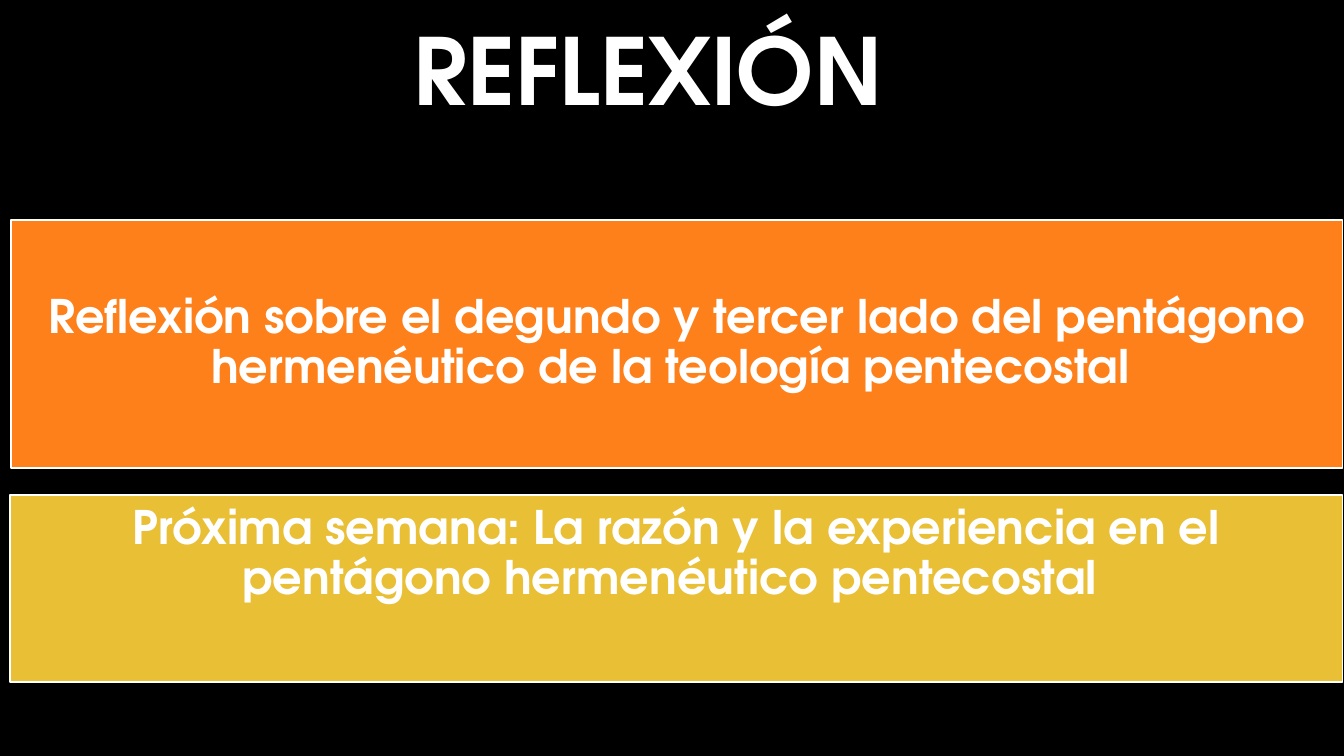
import pptx
import pptx.dml.color
import pptx.enum.shapes
import pptx.enum.text
import pptx.util

Cm = pptx.util.Cm
Pt = pptx.util.Pt
Anchor = pptx.enum.text.MSO_ANCHOR


def color(code):
    """Turn a hex string into a colour."""
    return pptx.dml.color.RGBColor.from_string(code)


def write(frame, text, size, font, ink, anchor=Anchor.MIDDLE, pad=0.36, head=0.36):
    """Put one centred bold paragraph into a text frame."""
    frame.word_wrap = True
    frame.vertical_anchor = anchor
    frame.margin_left = frame.margin_right = frame.margin_bottom = Cm(pad)
    frame.margin_top = Cm(head)
    para = frame.paragraphs[0]
    para.alignment = pptx.enum.text.PP_ALIGN.CENTER
    para.line_spacing = 0.9
    run = para.add_run()
    run.text = text
    run.font.name = font
    run.font.size = Pt(size)
    run.font.bold = True
    run.font.color.rgb = color(ink)


class Page:
    """Hold the style and the current slide."""

    font = "TeX Gyre Adventor"
    ink = "FFFFFF"
    back = "000000"

    def __init__(self, deck):
        """Add a blank slide with the dark background."""
        self.slide = deck.slides.add_slide(deck.slide_layouts[6])
        fill = self.slide.background.fill
        fill.solid()
        fill.fore_color.rgb = color(self.back)

    def title(self, text, left, top, width, height):
        """Add the heading."""
        box = self.slide.shapes.add_textbox(Cm(left), Cm(top), Cm(width), Cm(height))
        write(box.text_frame, text, 66, self.font, self.ink, pad=0.13, head=0.13)

    def panel(self, text, left, top, width, height, fill, **style):
        """Add a filled, outlined box with text."""
        kind = pptx.enum.shapes.MSO_SHAPE.RECTANGLE
        box = self.slide.shapes.add_shape(kind, Cm(left), Cm(top), Cm(width), Cm(height))
        box.shadow.inherit = False
        box.fill.solid()
        box.fill.fore_color.rgb = color(fill)
        box.line.color.rgb = color(self.ink)
        box.line.width = Pt(1)
        write(box.text_frame, text, 33, self.font, self.ink, **style)


def main():
    """Build and save the slide."""
    deck = pptx.Presentation()
    deck.slide_width = Cm(33.87)
    deck.slide_height = Cm(19.05)
    page = Page(deck)
    page.title("REFLEXIÓN ", 3.61, 0.23, 26.11, 3.33)
    page.panel(
        "Reflexión sobre el degundo y tercer lado del pentágono "
        "hermenéutico de la teología pentecostal ",
        0.28, 5.54, 33.55, 6.25, "FE801A")
    page.panel(
        "Próxima semana: La razón y la experiencia en el "
        "pentágono hermenéutico pentecostal ",
        0.25, 12.47, 33.58, 4.72, "E9BF35", anchor=Anchor.TOP, head=0.25)
    deck.save("out.pptx")


if __name__ == "__main__":
    main()
